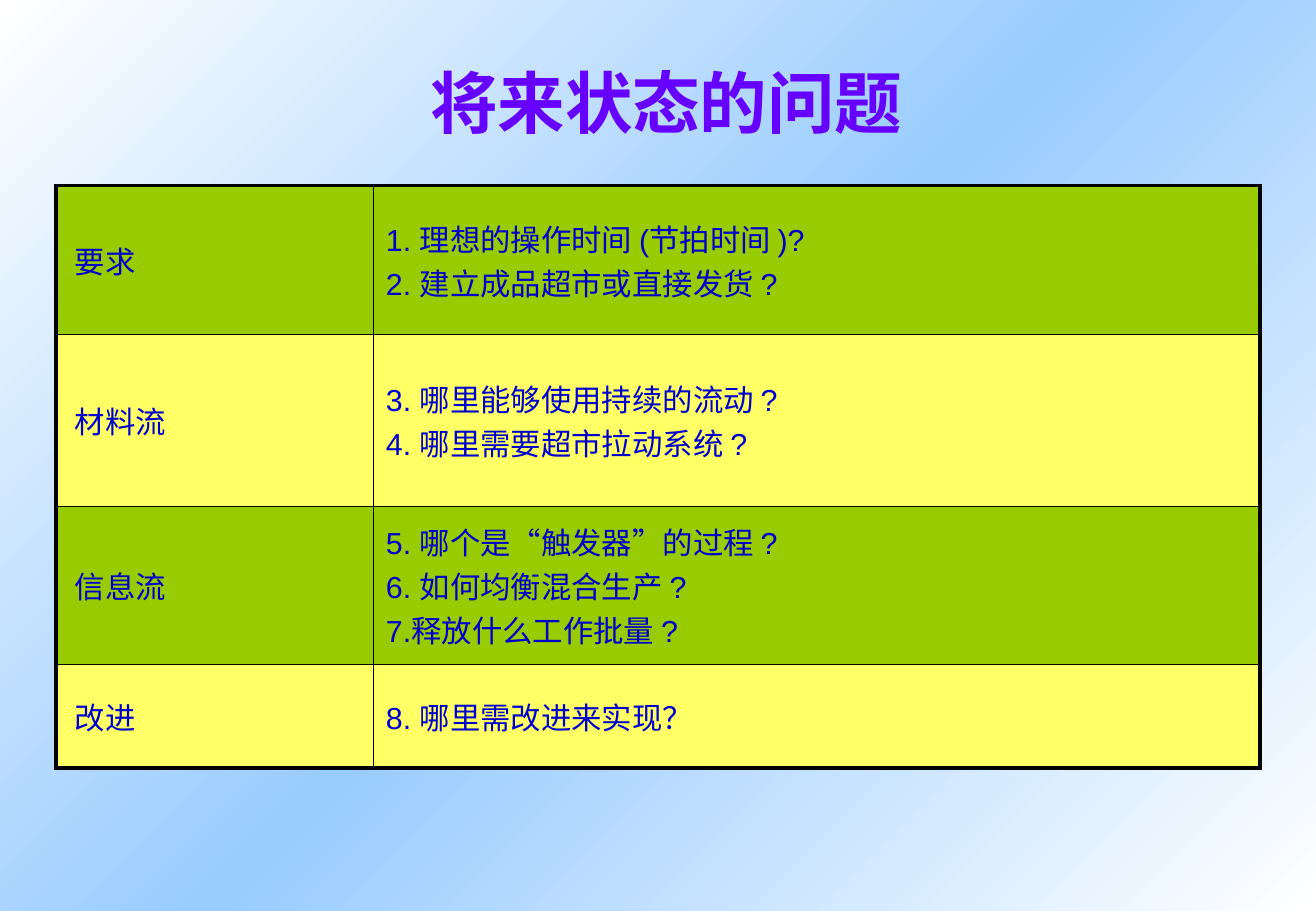
from lxml.etree import SubElement
from pptx import Presentation
from pptx.dml.color import RGBColor
from pptx.enum.lang import MSO_LANGUAGE_ID as Language
from pptx.enum.text import MSO_ANCHOR as Anchor, PP_ALIGN as Align
from pptx.oxml import parse_xml
from pptx.oxml.ns import nsdecls, qn
from pptx.util import Inches, Pt

COLORS = {
    "title": "6600FF", "text": "0000CC", "green": "99CC00", "yellow": "FFFF66",
    "line": "000000", "edge": "FFFFFF", "middle": "99CCFF",
}
WIDTH, HEIGHT = Inches(10.83), Inches(7.5)
COLUMN_SHARES = (0.264, 0.736)
TOPICS = [
    (" 要求", 0.255, ["1. 理想的操作时间 (节拍时间 )?", "2. 建立成品超市或直接发货 ?"]),
    (" 材料流", 0.296, ["3. 哪里能够使用持续的流动 ?", "4. 哪里需要超市拉动系统 ?"]),
    (" 信息流", 0.271, ["5. 哪个是“触发器”的过程 ?", "6. 如何均衡混合生产 ?", "7.释放什么工作批量 ?"]),
    (" 改进", 0.178, ["8. 哪里需改进来实现？"]),
]


def share_box(left, top, width, height):
    """Turn shares of the slide into lengths."""
    return int(left * WIDTH), int(top * HEIGHT), int(width * WIDTH), int(height * HEIGHT)


def write(frame, lines, size, color, bold=False, align=Align.LEFT):
    """Fill a text frame with one paragraph per line."""
    frame.word_wrap = True
    for index, line in enumerate(lines):
        para = frame.paragraphs[0] if index == 0 else frame.add_paragraph()
        para.text = line
        para.alignment = align
        font = para.font
        font.name, font.size, font.bold = "Arial", Pt(size), bold
        font.color.rgb = RGBColor.from_string(COLORS[color])
        font.language_id = Language.SIMPLIFIED_CHINESE


def paint_background(page):
    """Lay a diagonal three-stop gradient behind the slide."""
    fill = page.background.fill
    fill.gradient()
    gradient = page.background._cSld.find(".//" + qn("a:gradFill"))
    for child in list(gradient):
        gradient.remove(child)
    stops = SubElement(gradient, qn("a:gsLst"))
    for position, name in ((0, "edge"), (50, "middle"), (100, "edge")):
        stop = SubElement(stops, qn("a:gs"), pos=str(position * 1000))
        SubElement(stop, qn("a:srgbClr"), val=COLORS[name])
    SubElement(gradient, qn("a:lin"), ang=str(45 * 60000), scaled="1")


def add_title(page, box):
    """Place the centred heading in the box."""
    frame = page.shapes.add_textbox(*box).text_frame
    frame.vertical_anchor = Anchor.MIDDLE
    write(frame, [" 将来状态的问题"], 40, "title", True, Align.CENTER)


def set_borders(cell, outer_sides):
    """Draw thick lines on the outer sides of a cell and thin ones elsewhere."""
    properties = cell._tc.get_or_add_tcPr()
    for index, side in enumerate("LRTB"):
        width = Pt(2.25 if side in outer_sides else 1)
        properties.insert(index, parse_xml(
            f'<a:ln{side} {nsdecls("a")} w="{width}"><a:solidFill>'
            f'<a:srgbClr val="{COLORS["line"]}"/></a:solidFill></a:ln{side}>'))


def add_question_table(page, box):
    """Build the table of topics and their questions in the box."""
    table = page.shapes.add_table(len(TOPICS), len(COLUMN_SHARES), *box).table
    table.first_row = table.horz_banding = False
    for column, share in zip(table.columns, COLUMN_SHARES):
        column.width = int(box[2] * share)
    for index, (topic, share, questions) in enumerate(TOPICS):
        table.rows[index].height = int(box[3] * share)
        ends = ("T" if index == 0 else "") + ("B" if index == len(TOPICS) - 1 else "")
        for column, (lines, side) in enumerate((([topic], "L"), (questions, "R"))):
            cell = table.cell(index, column)
            cell.vertical_anchor = Anchor.MIDDLE
            cell.fill.solid()
            color = COLORS["yellow" if index % 2 else "green"]
            cell.fill.fore_color.rgb = RGBColor.from_string(color)
            write(cell.text_frame, lines, 18, "text")
            set_borders(cell, side + ends)


def main():
    """Create the slide and save the deck."""
    deck = Presentation()
    deck.slide_width, deck.slide_height = WIDTH, HEIGHT
    page = deck.slides.add_slide(deck.slide_layouts[6])
    paint_background(page)
    add_title(page, share_box(0.039, 0.028, 0.923, 0.167))
    add_question_table(page, share_box(0.0425, 0.204, 0.915, 0.639))
    deck.save("out.pptx")


if __name__ == "__main__":
    main()
